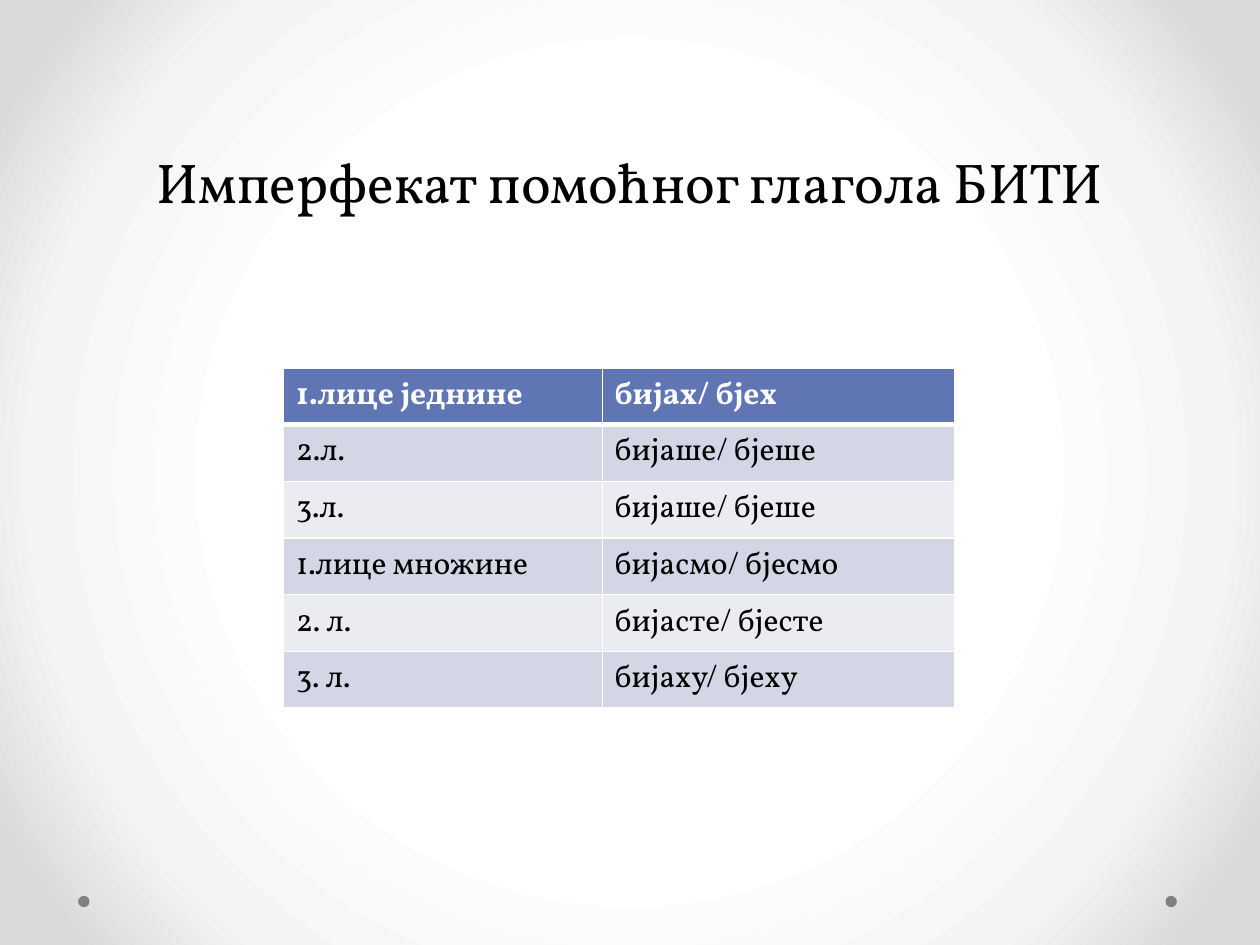
from dataclasses import dataclass

from lxml import etree
from pptx import Presentation
from pptx.dml.color import RGBColor
from pptx.enum import shapes, text
from pptx.oxml import ns, parse_xml
from pptx.util import Inches, Pt


@dataclass(frozen=True)
class Theme:
    font: str = "Vollkorn"
    title_size: int = 32
    table_size: int = 18
    black: str = "000000"
    white: str = "FFFFFF"
    dot: str = "808080"
    header: str = "6076B4"
    bands: tuple = ("D2D6E5", "EAECF2")
    background: tuple = ((50, "FFFFFF"), (76, "F4F4F4"), (92, "DADADA"))


theme = Theme()


def add_run(paragraph, words, size, color, bold=False):
    run = paragraph.add_run()
    run.text = words
    run.font.name = theme.font
    run.font.size = Pt(size)
    run.font.bold = bold
    run.font.color.rgb = RGBColor.from_string(color)


def set_borders(cell, widths):
    """Draw white cell borders; widths maps L, R, T, B to points, in that order."""
    properties = cell._tc.get_or_add_tcPr()
    for position, (side, width) in enumerate(widths.items()):
        line = etree.Element(ns.qn(f"a:ln{side}"), w=str(Pt(width)))
        fill = etree.SubElement(line, ns.qn("a:solidFill"))
        etree.SubElement(fill, ns.qn("a:srgbClr"), val=theme.white)
        properties.insert(position, line)


presentation = Presentation()
presentation.slide_width = Inches(10)
presentation.slide_height = Inches(7.5)
slide = presentation.slides.add_slide(presentation.slide_layouts[6])

# Radial background
slide.background.fill.solid()
background = slide._element.cSld.bg.bgPr
stops = "".join(
    f'<a:gs pos="{percent * 1000}"><a:srgbClr val="{color}"/></a:gs>'
    for percent, color in theme.background
)
gradient = parse_xml(
    f'<a:gradFill {ns.nsdecls("a")} rotWithShape="1"><a:gsLst>{stops}</a:gsLst>'
    '<a:path path="circle"><a:fillToRect l="50000" t="50000" r="50000" b="50000"/>'
    "</a:path></a:gradFill>"
)
background.replace(background[0], gradient)

# Corner dots
for left in (9.25, 0.62):
    dot = slide.shapes.add_shape(
        shapes.MSO_SHAPE.OVAL, Inches(left), Inches(7.11), Inches(0.09), Inches(0.09)
    )
    dot.shadow.inherit = False
    dot.fill.solid()
    dot.fill.fore_color.rgb = RGBColor.from_string(theme.dot)
    dot.line.fill.background()

# Title
title = slide.shapes.add_textbox(Inches(0.5), Inches(0), Inches(9), Inches(1.75))
title.text_frame.word_wrap = True
title.text_frame.vertical_anchor = text.MSO_ANCHOR.BOTTOM
paragraph = title.text_frame.paragraphs[0]
paragraph.alignment = text.PP_ALIGN.CENTER
paragraph.line_spacing = Pt(58)
add_run(paragraph, "Имперфекат помоћног глагола БИТИ", theme.title_size, theme.black)

# Conjugation table
conjugation = [
    ("1.лице једнине", "бијах/ бјех"),
    ("2.л.", "бијаше/ бјеше"),
    ("3.л.", "бијаше/ бјеше"),
    ("1.лице множине", "бијасмо/ бјесмо"),
    ("2. л.", "бијасте/ бјесте"),
    ("3. л.", "бијаху/ бјеху"),
]
row_height = 0.45
table = slide.shapes.add_table(
    len(conjugation), 2, Inches(2.25), Inches(2.92),
    Inches(5.33), Inches(row_height * len(conjugation)),
).table
for column, width in zip(table.columns, (2.53, 2.8)):
    column.width = Inches(width)

for row, forms in enumerate(conjugation):
    is_header = row == 0
    fill_color = theme.header if is_header else theme.bands[(row - 1) % 2]
    text_color = theme.white if is_header else theme.black
    top_width = 3 if row == 1 else 1
    bottom_width = 3 if is_header else 1
    for column, words in enumerate(forms):
        cell = table.cell(row, column)
        cell.fill.solid()
        cell.fill.fore_color.rgb = RGBColor.from_string(fill_color)
        set_borders(cell, {"L": 1, "R": 1, "T": top_width, "B": bottom_width})
        add_run(cell.text_frame.paragraphs[0], words, theme.table_size, text_color, is_header)

presentation.save("out.pptx")
